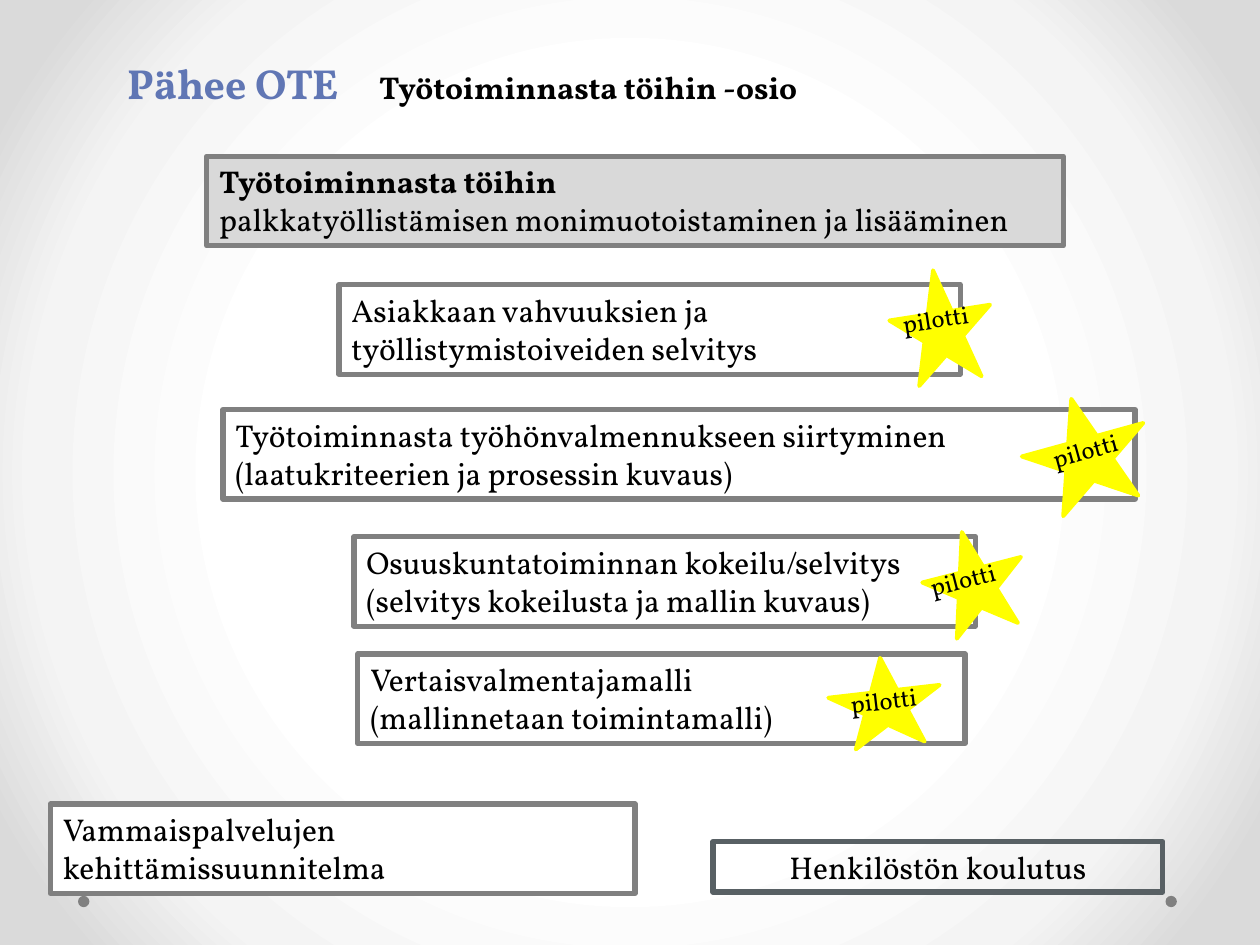
"""Build the slide on moving from work activity to paid employment."""
from dataclasses import dataclass
from typing import Optional

from lxml.etree import SubElement
from pptx import Presentation
from pptx.dml.color import RGBColor
from pptx.enum.shapes import MSO_SHAPE
from pptx.enum.text import MSO_ANCHOR, MSO_AUTO_SIZE, PP_ALIGN
from pptx.oxml import parse_xml
from pptx.oxml.ns import nsdecls, qn
from pptx.util import Pt

FONT = "Vollkorn"
BLACK = RGBColor(0x00, 0x00, 0x00)
WHITE = RGBColor(0xFF, 0xFF, 0xFF)
BLUE = RGBColor(0x60, 0x76, 0xB4)
GREY = RGBColor(0x80, 0x80, 0x80)
LIGHT_GREY = RGBColor(0xD9, 0xD9, 0xD9)
SLATE = RGBColor(0x58, 0x60, 0x64)
YELLOW = RGBColor(0xFF, 0xFF, 0x00)
OFF_WHITE = RGBColor(0xF4, 0xF4, 0xF4)
EDGE_GREY = RGBColor(0xDA, 0xDA, 0xDA)
BACKGROUND_STOPS = ((50, WHITE), (76, OFF_WHITE), (92, EDGE_GREY))
BOX_HEIGHT = 51.1
DOT_SIZE = 6.5


@dataclass(frozen=True)
class Box:
    left: float
    top: float
    width: float
    lines: tuple[str, ...]
    height: float = BOX_HEIGHT
    fill: Optional[RGBColor] = WHITE
    line: RGBColor = GREY
    alignment: PP_ALIGN = PP_ALIGN.LEFT
    bold_first: bool = False


@dataclass(frozen=True)
class Pilot:
    star: tuple[float, float, float, float]
    label: tuple[float, float, float, float]
    rotation: float


BOXES = (
    Box(118.1, 89.3, 489.6,
        ("Työtoiminnasta töihin", "palkkatyöllistämisen monimuotoistaminen ja lisääminen"),
        fill=LIGHT_GREY, bold_first=True),
    Box(193.7, 162.7, 355, ("Asiakkaan vahvuuksien ja työllistymistoiveiden selvitys",)),
    Box(127.4, 234, 521.3,
        ("Työtoiminnasta työhönvalmennukseen siirtyminen", "(laatukriteerien ja prosessin kuvaus)")),
    Box(202.3, 306.7, 355,
        ("Osuuskuntatoiminnan kokeilu/selvitys (selvitys kokeilusta ja mallin kuvaus)",)),
    Box(204.5, 373.7, 347, ("Vertaisvalmentajamalli", "(mallinnetaan toimintamalli)")),
    Box(28.8, 459.4, 334.1, ("Vammaispalvelujen kehittämissuunnitelma",)),
    Box(407.5, 481, 257, ("Henkilöstön koulutus",), height=28.8, fill=None, line=SLATE,
        alignment=PP_ALIGN.CENTER),
)
PILOTS = (
    Pilot((509, 154.1, 58.3, 64.1), (508.3, 166.3, 101.5, 24.5), -8.9),
    Pilot((584.6, 226.8, 72, 63.4), (593.3, 239.8, 92.9, 24.5), -15.4),
    Pilot((527.8, 303.1, 58.3, 58.3), (524.9, 313.9, 90.7, 35.3), -14.5),
    Pilot((473.8, 375.8, 64.1, 50.4), (478.8, 385.9, 90.7, 24.5), -6.6),
)


def set_background(slide) -> None:
    """Give the slide its radial gradient."""
    stops = "".join(
        f'<a:gs pos="{position * 1000}"><a:srgbClr val="{color}"/></a:gs>'
        for position, color in BACKGROUND_STOPS
    )
    background = parse_xml(
        f'<p:bg {nsdecls("p", "a")}><p:bgPr><a:gradFill rotWithShape="1"><a:gsLst>{stops}</a:gsLst>'
        '<a:path path="circle"><a:fillToRect l="50000" t="50000" r="50000" b="50000"/></a:path>'
        "</a:gradFill><a:effectLst/></p:bgPr></p:bg>"
    )
    slide.element.cSld.insert(0, background)


def add_text(paragraph, text: str, *, size: float = 18, color: RGBColor = BLACK,
             bold: bool = False, alignment: PP_ALIGN = PP_ALIGN.LEFT) -> None:
    """Add one formatted run to a paragraph."""
    paragraph.alignment = alignment
    run = paragraph.add_run()
    run.text = text
    run.font.name = FONT
    run.font.size = Pt(size)
    run.font.color.rgb = color
    run.font.bold = bold


def prepare_frame(frame) -> None:
    """Make a text frame wrap and start at its top."""
    frame.word_wrap = True
    frame.auto_size = MSO_AUTO_SIZE.NONE
    frame.vertical_anchor = MSO_ANCHOR.TOP


def draw_shape(shapes, kind: MSO_SHAPE, place: tuple[float, ...], fill: Optional[RGBColor],
               line: Optional[RGBColor] = None, line_width: float = 3):
    """Draw a flat shape with round line joins."""
    shape = shapes.add_shape(kind, *map(Pt, place))
    shape.shadow.inherit = False
    if fill is None:
        shape.fill.background()
    else:
        shape.fill.solid()
        shape.fill.fore_color.rgb = fill
    if line is None:
        shape.line.fill.background()
    else:
        shape.line.color.rgb = line
        shape.line.width = Pt(line_width)
        SubElement(shape.line._get_or_add_ln(), qn("a:round"))
    return shape


def draw_box(slide, box: Box) -> None:
    """Draw a framed box with its lines of text."""
    shape = draw_shape(slide.shapes, MSO_SHAPE.RECTANGLE,
                       (box.left, box.top, box.width, box.height), box.fill, box.line)
    frame = shape.text_frame
    prepare_frame(frame)
    for index, text in enumerate(box.lines):
        paragraph = frame.add_paragraph() if index else frame.paragraphs[0]
        add_text(paragraph, text, bold=box.bold_first and index == 0, alignment=box.alignment)


def draw_pilot(slide, pilot: Pilot) -> None:
    """Draw a tilted star grouped with its label."""
    group = slide.shapes.add_group_shape()
    star = draw_shape(group.shapes, MSO_SHAPE.STAR_5_POINT, pilot.star, YELLOW, YELLOW, 2.25)
    label = group.shapes.add_textbox(*map(Pt, pilot.label))
    prepare_frame(label.text_frame)
    add_text(label.text_frame.paragraphs[0], "pilotti", size=14)
    star.rotation = label.rotation = pilot.rotation


def draw_title(slide) -> None:
    """Fill and place the title placeholder."""
    title = slide.shapes.title
    title.left, title.top, title.width, title.height = map(Pt, (65.5, 29.5, 566.6, 36))
    prepare_frame(title.text_frame)
    paragraph = title.text_frame.paragraphs[0]
    add_text(paragraph, "Pähee OTE\t", size=24, color=BLUE, bold=True)
    add_text(paragraph, "Työtoiminnasta töihin -osio", bold=True)


def main() -> None:
    """Build and save the presentation."""
    presentation = Presentation()
    presentation.slide_width, presentation.slide_height = Pt(720), Pt(540)
    slide = presentation.slides.add_slide(presentation.slide_layouts[5])
    set_background(slide)
    draw_title(slide)
    for left in (44.6, 666):
        draw_shape(slide.shapes, MSO_SHAPE.OVAL, (left, 511.9, DOT_SIZE, DOT_SIZE), GREY)
    for box in BOXES:
        draw_box(slide, box)
    for pilot in PILOTS:
        draw_pilot(slide, pilot)
    presentation.save("out.pptx")


if __name__ == "__main__":
    main()
